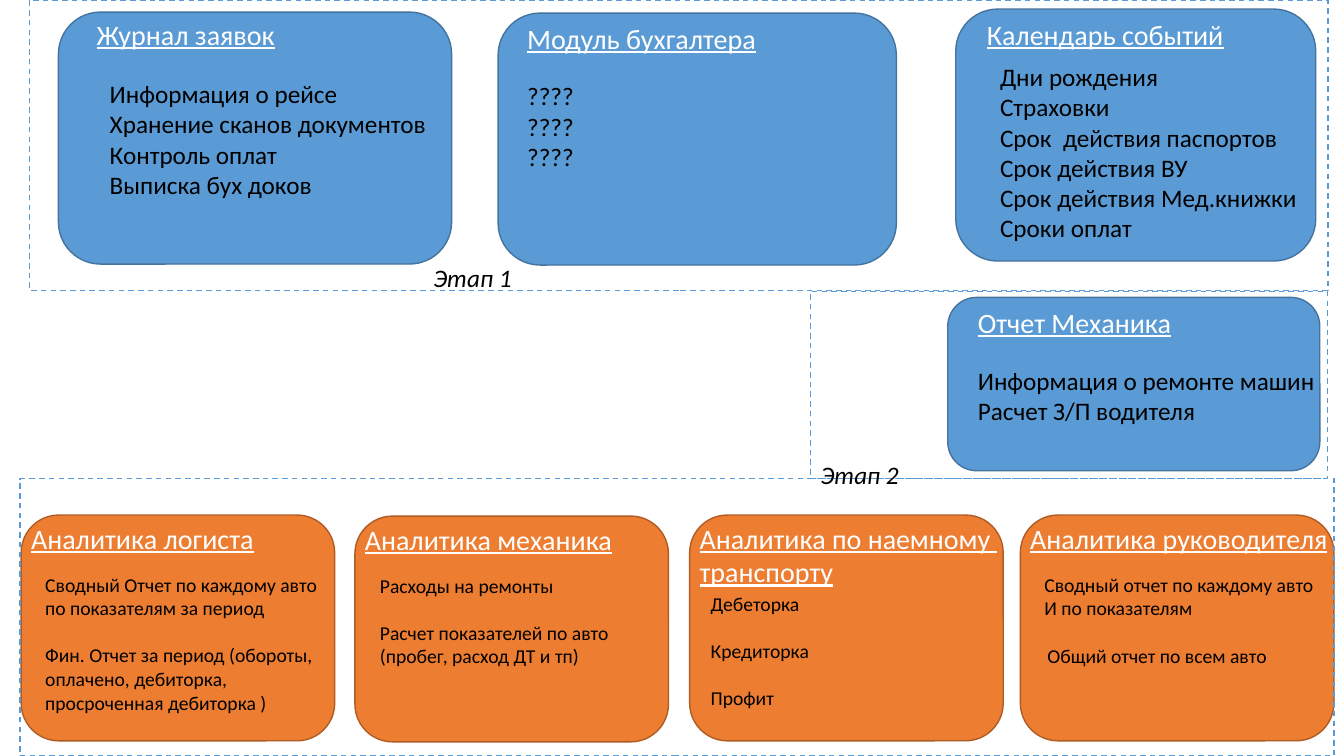
from dataclasses import dataclass

import pptx
import pptx.dml.color
import pptx.enum.dml
import pptx.enum.shapes
import pptx.enum.text
import pptx.util

RGBColor = pptx.dml.color.RGBColor
BLUE = RGBColor(0x5B, 0x9B, 0xD5)
BLUE_EDGE = RGBColor(0x43, 0x73, 0x9E)
ORANGE = RGBColor(0xED, 0x7D, 0x31)
ORANGE_EDGE = RGBColor(0xAF, 0x5C, 0x24)
WHITE = RGBColor(0xFF, 0xFF, 0xFF)
BLACK = RGBColor(0x00, 0x00, 0x00)

EMU_PER_PX = 9144
FONT_NAME = "Calibri"


@dataclass(frozen=True)
class Box:
    left: int
    top: int
    width: int
    height: int

    def emu(self) -> tuple[int, ...]:
        lengths = (self.left, self.top, self.width, self.height)
        return tuple(length * EMU_PER_PX for length in lengths)


@dataclass(frozen=True)
class TextStyle:
    size: int
    color: RGBColor = BLACK
    underline: bool = False
    italic: bool = False
    wrap: bool = False
    gap: int = 0


@dataclass(frozen=True)
class Label:
    box: Box
    style: TextStyle
    lines: tuple[str, ...]


@dataclass(frozen=True)
class Card:
    box: Box
    fill: RGBColor
    edge: RGBColor
    labels: tuple[Label, ...]


TITLE = TextStyle(20, WHITE, underline=True)
LIST = TextStyle(18)
STAGE = TextStyle(18, italic=True)
DETAIL = TextStyle(14, wrap=True)
SPACED_DETAIL = TextStyle(14, wrap=True, gap=17)


def module_card(box: Box, title_box: Box, title: str, list_box: Box, *lines: str) -> Card:
    labels = (Label(title_box, TITLE, (title,)), Label(list_box, LIST, lines))
    return Card(box, BLUE, BLUE_EDGE, labels)


def analytics_card(left: int, top: int, title_box: Box, title: tuple[str, ...], *details: Label) -> Card:
    labels = (Label(title_box, TITLE, title), *details)
    return Card(Box(left, top, 311, 224), ORANGE, ORANGE_EDGE, labels)


CARDS = (
    module_card(
        Box(58, 12, 390, 250), Box(86, 12, 199, 44), "Журнал заявок", Box(99, 73, 337, 131),
        "Информация о рейсе", "Хранение сканов документов", "Контроль оплат", "Выписка бух доков",
    ),
    module_card(
        Box(494, 13, 395, 250), Box(513, 16, 249, 44), "Модуль бухгалтера", Box(513, 75, 67, 101),
        "????", "????", "????",
    ),
    module_card(
        Box(948, 9, 357, 250), Box(969, 12, 257, 44), "Календарь событий", Box(982, 56, 318, 192),
        "Дни рождения", "Страховки", "Срок  действия паспортов",
        "Срок действия ВУ", "Срок действия Мед.книжки", "Сроки оплат",
    ),
    module_card(
        Box(940, 295, 369, 172), Box(960, 298, 214, 44), "Отчет Механика", Box(960, 357, 358, 71),
        "Информация о ремонте машин", "Расчет З/П водителя",
    ),
    analytics_card(
        21, 511, Box(21, 512, 243, 44), ("Аналитика логиста",),
        Label(Box(35, 563, 297, 151), SPACED_DETAIL, (
            "Сводный Отчет по каждому авто по показателям за период",
            "Фин. Отчет за период (обороты, оплачено, дебиторка, просроченная дебиторка )",
        )),
    ),
    analytics_card(
        352, 512, Box(352, 513, 267, 44), ("Аналитика механика",),
        Label(Box(367, 564, 297, 104), SPACED_DETAIL, (
            "Расходы на ремонты",
            "Расчет показателей по авто (пробег, расход ДТ и тп)",
        )),
    ),
    analytics_card(
        1012, 511, Box(1012, 512, 317, 44), ("Аналитика руководителя",),
        Label(Box(1026, 563, 297, 57), DETAIL, ("Сводный отчет по каждому авто", "И по показателям")),
        Label(Box(1029, 634, 297, 34), DETAIL, ("Общий отчет по всем авто",)),
    ),
    analytics_card(
        684, 511, Box(684, 512, 317, 77), ("Аналитика по наемному ", "транспорту"),
        Label(Box(695, 582, 297, 128), SPACED_DETAIL, ("Дебеторка", "Кредиторка", "Профит")),
    ),
)

STAGE_FRAMES = (
    Box(29, 0, 1288, 288),
    Box(20, 475, 1303, 275),
    Box(804, 289, 513, 186),
)

STAGE_LABELS = (
    Label(Box(420, 255, 99, 40), STAGE, ("Этап 1",)),
    Label(Box(804, 451, 99, 40), STAGE, ("Этап 2",)),
)


def draw_label(slide: pptx.slide.Slide, label: Label) -> None:
    text_frame = slide.shapes.add_textbox(*label.box.emu()).text_frame
    style = label.style
    text_frame.text = "\n".join(label.lines)
    text_frame.word_wrap = style.wrap
    text_frame.auto_size = pptx.enum.text.MSO_AUTO_SIZE.SHAPE_TO_FIT_TEXT
    for index, paragraph in enumerate(text_frame.paragraphs):
        if index and style.gap:
            paragraph.space_before = pptx.util.Pt(style.gap)
        font = paragraph.font
        font.name = FONT_NAME
        font.size = pptx.util.Pt(style.size)
        font.color.rgb = style.color
        font.underline = style.underline
        font.italic = style.italic


def draw_card(slide: pptx.slide.Slide, card: Card) -> None:
    shape = slide.shapes.add_shape(
        pptx.enum.shapes.MSO_SHAPE.ROUNDED_RECTANGLE, *card.box.emu()
    )
    shape.shadow.inherit = False
    shape.fill.solid()
    shape.fill.fore_color.rgb = card.fill
    shape.line.color.rgb = card.edge
    shape.line.width = pptx.util.Pt(1)
    for label in card.labels:
        draw_label(slide, label)


def draw_stage_frame(slide: pptx.slide.Slide, box: Box) -> None:
    shape = slide.shapes.add_shape(pptx.enum.shapes.MSO_SHAPE.RECTANGLE, *box.emu())
    shape.shadow.inherit = False
    shape.fill.background()
    shape.line.color.rgb = BLUE
    shape.line.width = pptx.util.Pt(1)
    shape.line.dash_style = pptx.enum.dml.MSO_LINE.DASH


def main() -> None:
    presentation = pptx.Presentation()
    presentation.slide_width = 1333 * EMU_PER_PX
    presentation.slide_height = 750 * EMU_PER_PX
    slide = presentation.slides.add_slide(presentation.slide_layouts[6])
    for card in CARDS:
        draw_card(slide, card)
    for frame in STAGE_FRAMES:
        draw_stage_frame(slide, frame)
    for label in STAGE_LABELS:
        draw_label(slide, label)
    presentation.save("out.pptx")


if __name__ == "__main__":
    main()
